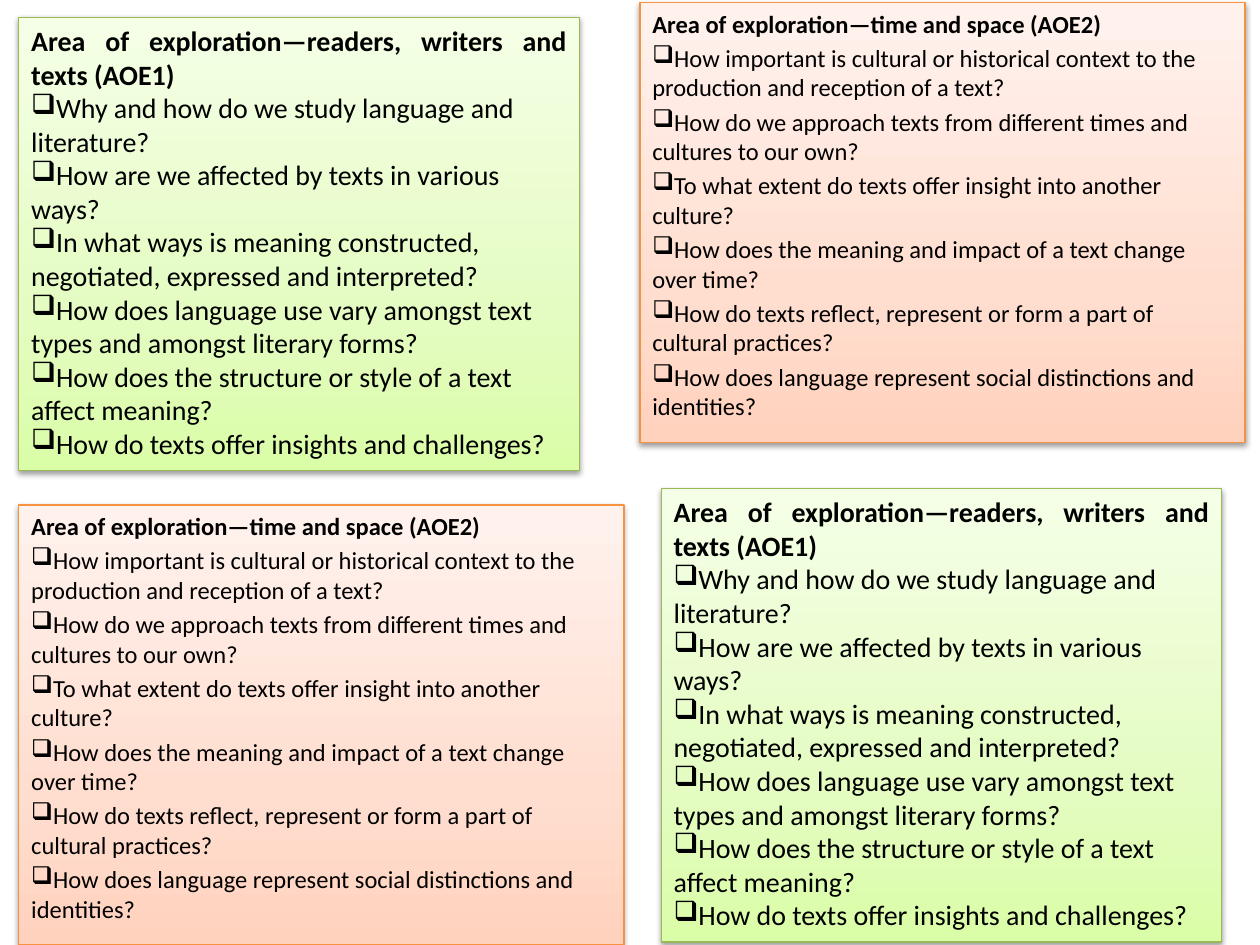
"""Build a slide of four cards with guiding questions for two areas of exploration."""
from dataclasses import dataclass

from lxml.etree import SubElement
from pptx import Presentation
from pptx.dml.color import RGBColor
from pptx.enum.shapes import MSO_SHAPE
from pptx.enum.text import MSO_ANCHOR, PP_ALIGN
from pptx.oxml import parse_xml
from pptx.oxml.ns import nsdecls, qn
from pptx.util import Cm, Pt


@dataclass(frozen=True)
class Theme:
    font: str = "Calibri"
    text: str = "000000"
    shadow: str = "000000"
    green: tuple = ("DAFDA7", "E4FCC2", "F5FFE7")
    green_line: str = "98B955"
    orange: tuple = ("FFD2BD", "FFDED0", "FFF2ED")
    orange_line: str = "F69240"
    readers_size: int = 16
    time_size: int = 14


theme = Theme()

readers = {
    "heading": "Area of exploration—readers, writers and texts (AOE1)",
    "questions": [
        "Why and how do we study language and literature?",
        "How are we affected by texts in various ways?",
        "In what ways is meaning constructed, negotiated, expressed and interpreted?",
        "How does language use vary amongst text types and amongst literary forms?",
        "How does the structure or style of a text affect meaning?",
        "How do texts offer insights and challenges?",
    ],
    "size": theme.readers_size,
    "colors": theme.green,
    "line": theme.green_line,
    "alignment": PP_ALIGN.JUSTIFY,
    "heading_space": 0,
    "question_space": 0,
    "width": 11.3,
    "height": 9.14,
}
time_and_space = {
    "heading": "Area of exploration—time and space (AOE2)",
    "questions": [
        "How important is cultural or historical context to the production and reception of a text?",
        "How do we approach texts from different times and cultures to our own?",
        "To what extent do texts offer insight into another culture?",
        "How does the meaning and impact of a text change over time?",
        "How do texts reflect, represent or form a part of cultural practices?",
        "How does language represent social distinctions and identities?",
    ],
    "size": theme.time_size,
    "colors": theme.orange,
    "line": theme.orange_line,
    "alignment": PP_ALIGN.LEFT,
    "heading_space": 16,
    "question_space": 20,
    "width": 12.2,
    "height": 8.87,
}
cards = [
    (time_and_space, 12.9, 0.05),
    (readers, 0.38, 0.35),
    (readers, 13.33, 9.85),
    (time_and_space, 0.38, 10.18),
]


def style_card(shape, area):
    stops = "".join(
        f'<a:gs pos="{position}"><a:srgbClr val="{color}"/></a:gs>'
        for position, color in zip((0, 35000, 100000), area["colors"])
    )
    gradient = parse_xml(
        f'<a:gradFill {nsdecls("a")} rotWithShape="1"><a:gsLst>{stops}</a:gsLst>'
        '<a:lin ang="16200000" scaled="0"/></a:gradFill>'
    )
    properties = shape.element.spPr
    properties.find(qn("a:prstGeom")).addnext(gradient)
    shape.line.color.rgb = RGBColor.from_string(area["line"])
    shape.line.width = Pt(0.75)
    shape.shadow.inherit = False
    properties.find(qn("a:effectLst")).append(parse_xml(
        f'<a:outerShdw {nsdecls("a")} blurRad="{Pt(3.1)}" dist="{Pt(1.6)}" dir="5400000" '
        f'rotWithShape="0"><a:srgbClr val="{theme.shadow}"><a:alpha val="38000"/></a:srgbClr>'
        '</a:outerShdw>'
    ))


def format_question(paragraph, space_percent):
    properties = paragraph._p.get_or_add_pPr()
    properties.set("marL", "0")
    properties.set("indent", "0")
    if space_percent:
        spacing = SubElement(properties, qn("a:spcBef"))
        SubElement(spacing, qn("a:spcPct")).set("val", str(space_percent * 1000))
    SubElement(properties, qn("a:buChar")).set("char", "❑")


presentation = Presentation()
presentation.slide_width = Cm(25.4)
presentation.slide_height = Cm(19.05)
slide = presentation.slides.add_slide(presentation.slide_layouts[6])

for area, left, top in cards:
    shape = slide.shapes.add_shape(
        MSO_SHAPE.RECTANGLE, Cm(left), Cm(top), Cm(area["width"]), Cm(area["height"])
    )
    style_card(shape, area)
    frame = shape.text_frame
    frame.word_wrap = True
    frame.vertical_anchor = MSO_ANCHOR.TOP
    for index, text in enumerate([area["heading"], *area["questions"]]):
        is_heading = index == 0
        paragraph = frame.paragraphs[0] if is_heading else frame.add_paragraph()
        paragraph.text = text
        if is_heading:
            paragraph.alignment = area["alignment"]
            paragraph.space_before = Pt(area["heading_space"])
        else:
            paragraph.alignment = PP_ALIGN.LEFT
            format_question(paragraph, area["question_space"])
        paragraph.font.name = theme.font
        paragraph.font.size = Pt(area["size"])
        paragraph.font.bold = is_heading
        paragraph.font.color.rgb = RGBColor.from_string(theme.text)

presentation.save("out.pptx")
